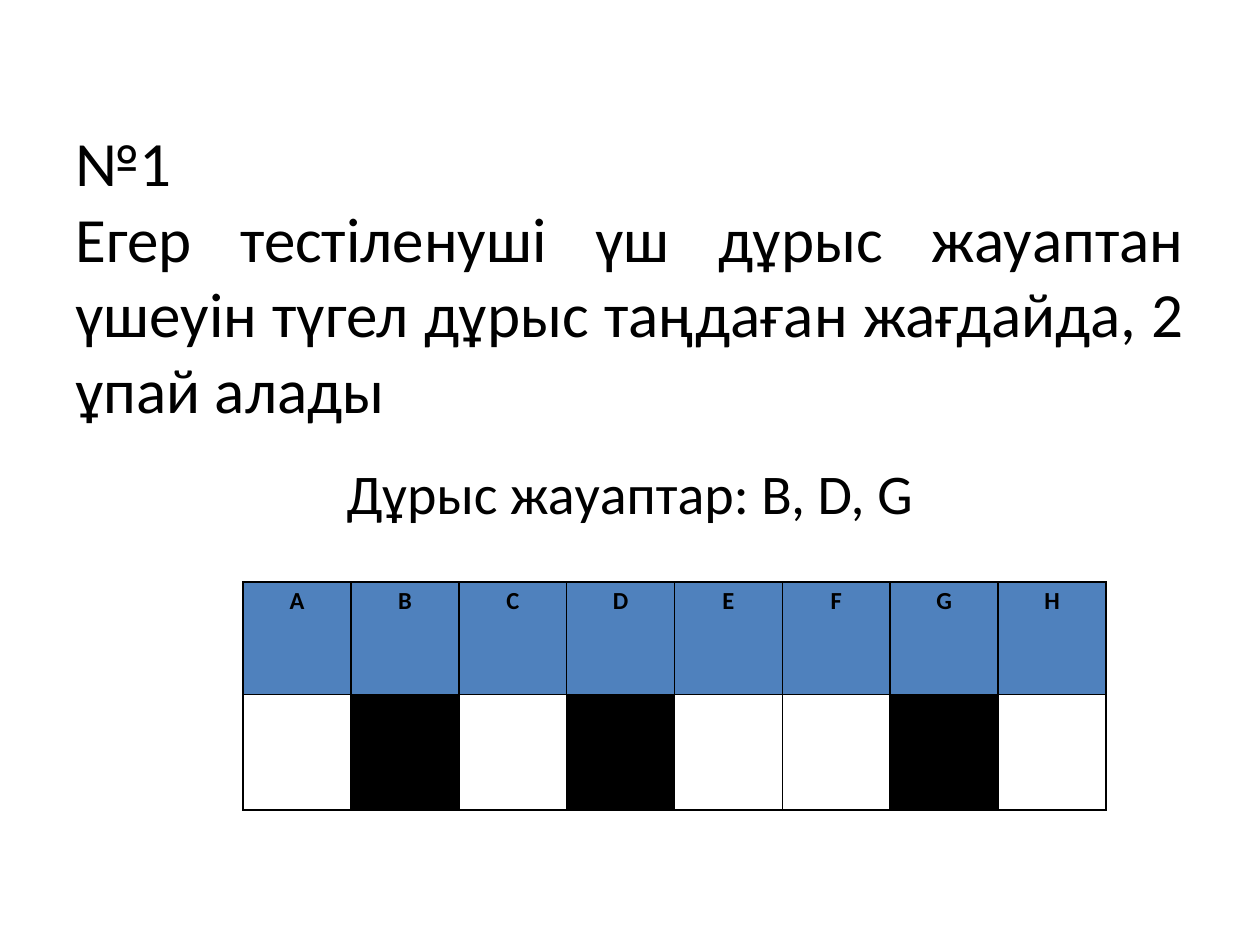
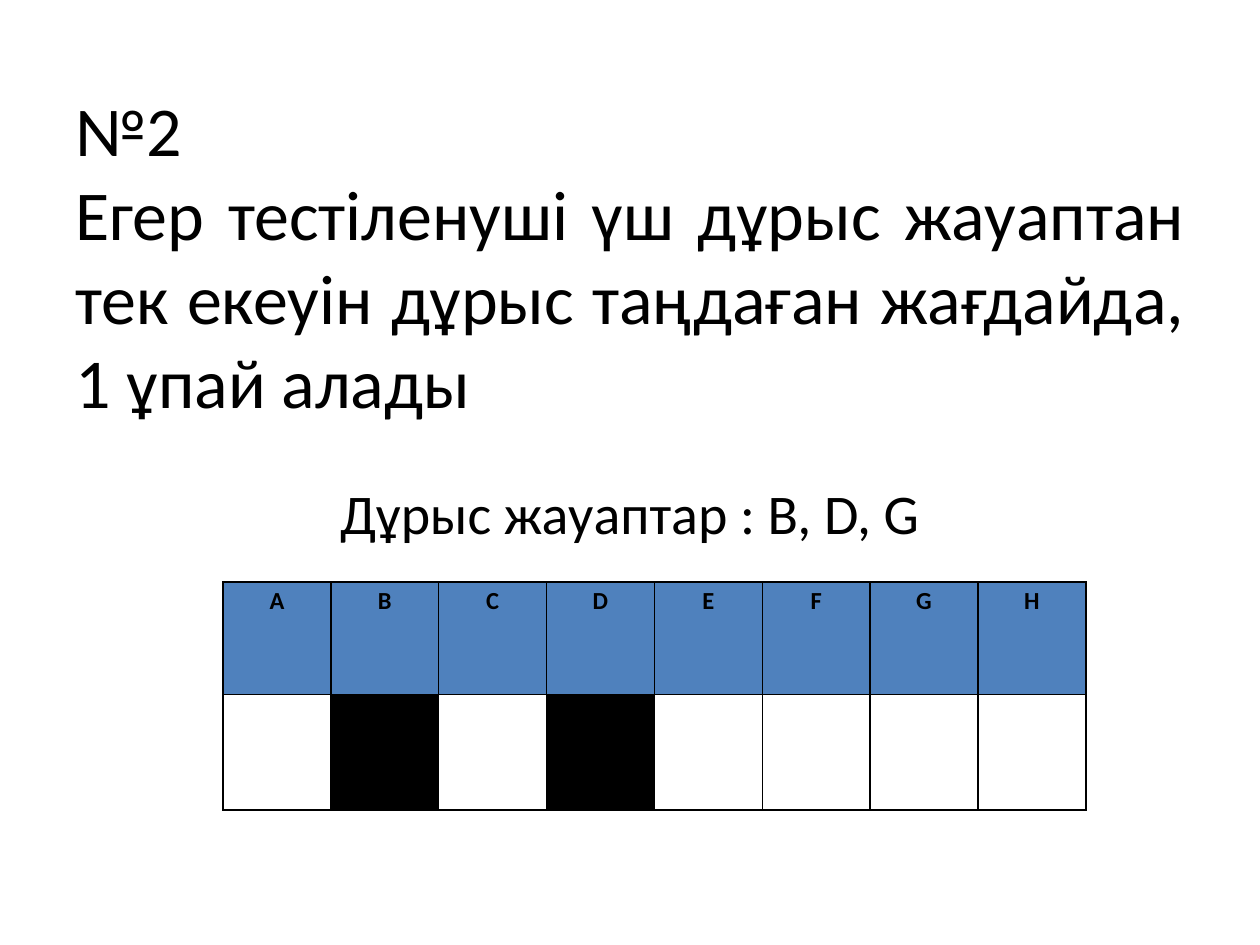
from dataclasses import dataclass

import lxml.etree
import pptx
import pptx.dml.color
import pptx.enum.text
import pptx.oxml.ns
import pptx.util

# Shared look
SLIDE_WIDTH = pptx.util.Inches(10)
SLIDE_HEIGHT = pptx.util.Inches(7.5)
FONT = "Calibri"
BLACK = "000000"
HEADER_BLUE = "4F81BD"
LETTERS = "ABCDEFGH"
ALIGN = pptx.enum.text.PP_ALIGN
ANCHOR = pptx.enum.text.MSO_ANCHOR


@dataclass(frozen=True)
class Area:
    """A rectangle in percent of the slide's width and height."""
    left: float
    top: float
    width: float
    height: float

    def lengths(self) -> tuple[int, int, int, int]:
        return (across(self.left), down(self.top),
                across(self.width), down(self.height))


@dataclass(frozen=True)
class ScoringCase:
    rule: str
    rule_size: int
    rule_height: float
    answers: str
    answers_top: float
    answers_height: float
    table_left: float
    marked: str


CASES = [
    ScoringCase("№1\vЕгер тестіленуші үш дұрыс жауаптан үшеуін түгел дұрыс "
                "таңдаған жағдайда, 2 ұпай алады", 36, 48.27,
                "Дұрыс жауаптар: B, D, G", 47.87, 45.2, 19.3, "BDG"),
    ScoringCase("№2\vЕгер тестіленуші үш дұрыс жауаптан тек екеуін дұрыс "
                "таңдаған жағдайда, 1 ұпай алады", 40, 44,
                "Дұрыс жауаптар : B, D, G", 50, 39.33, 17.7, "BD"),
]
TABLE_TOP = 61.6
TABLE_WIDTH = 68.5
ROW_HEIGHTS = (11.87, 12.27)


def across(percent: float) -> int:
    return round(SLIDE_WIDTH * percent / 100)


def down(percent: float) -> int:
    return round(SLIDE_HEIGHT * percent / 100)


def color(value: str) -> pptx.dml.color.RGBColor:
    return pptx.dml.color.RGBColor.from_string(value)


def write(frame, text: str, size: int, align, bold: bool = False):
    """Fill the first paragraph of a text frame and return it."""
    para = frame.paragraphs[0]
    para.text = text
    para.alignment = align
    para.font.name = FONT
    para.font.size = pptx.util.Pt(size)
    para.font.bold = bold
    para.font.color.rgb = color(BLACK)
    return para


def add_text(page, area: Area, text: str, size: int, align, anchor):
    box = page.shapes.add_textbox(*area.lengths())
    box.text_frame.word_wrap = True
    box.text_frame.vertical_anchor = anchor
    return write(box.text_frame, text, size, align)


def add_borders(cell) -> None:
    """Draw a thin black line on all four sides of a cell."""
    properties = cell._tc.get_or_add_tcPr()
    for index, side in enumerate(("lnL", "lnR", "lnT", "lnB")):
        line = lxml.etree.Element(pptx.oxml.ns.qn(f"a:{side}"),
                                  w=str(pptx.util.Pt(1)))
        fill = lxml.etree.SubElement(line, pptx.oxml.ns.qn("a:solidFill"))
        lxml.etree.SubElement(fill, pptx.oxml.ns.qn("a:srgbClr"), val=BLACK)
        properties.insert(index, line)


def style_cell(cell, fill: str | None) -> None:
    cell.margin_left = cell.margin_right = pptx.util.Inches(0.07)
    cell.margin_top = cell.margin_bottom = 0
    if fill:
        cell.fill.solid()
        cell.fill.fore_color.rgb = color(fill)
    else:
        cell.fill.background()
    add_borders(cell)


def add_answer_table(page, left: float, marked: str) -> None:
    area = Area(left, TABLE_TOP, TABLE_WIDTH, sum(ROW_HEIGHTS))
    table = page.shapes.add_table(len(ROW_HEIGHTS), len(LETTERS),
                                  *area.lengths()).table
    table.horz_banding = False
    for row, height in zip(table.rows, ROW_HEIGHTS):
        row.height = down(height)
    for index, letter in enumerate(LETTERS):
        table.columns[index].width = across(TABLE_WIDTH / len(LETTERS))
        header, answer = table.cell(0, index), table.cell(1, index)
        para = write(header.text_frame, letter, 14, ALIGN.CENTER, bold=True)
        para.line_spacing = 1.15
        style_cell(header, HEADER_BLUE)
        style_cell(answer, BLACK if letter in marked else None)


def add_case(deck, case: ScoringCase) -> None:
    page = deck.slides.add_slide(deck.slide_layouts[6])
    # Scoring rule
    add_text(page, Area(5, 4.93, 90, case.rule_height), case.rule,
             case.rule_size, ALIGN.JUSTIFY, ANCHOR.MIDDLE)
    # Correct answers
    para = add_text(page, Area(9.5, case.answers_top, 81, case.answers_height),
                    case.answers, 32, ALIGN.CENTER, ANCHOR.TOP)
    para.space_before = pptx.util.Pt(6.4)
    # Answers chosen
    add_answer_table(page, case.table_left, case.marked)


def main() -> None:
    deck = pptx.Presentation()
    deck.slide_width, deck.slide_height = SLIDE_WIDTH, SLIDE_HEIGHT
    for case in CASES:
        add_case(deck, case)
    deck.save("out.pptx")


if __name__ == "__main__":
    main()
